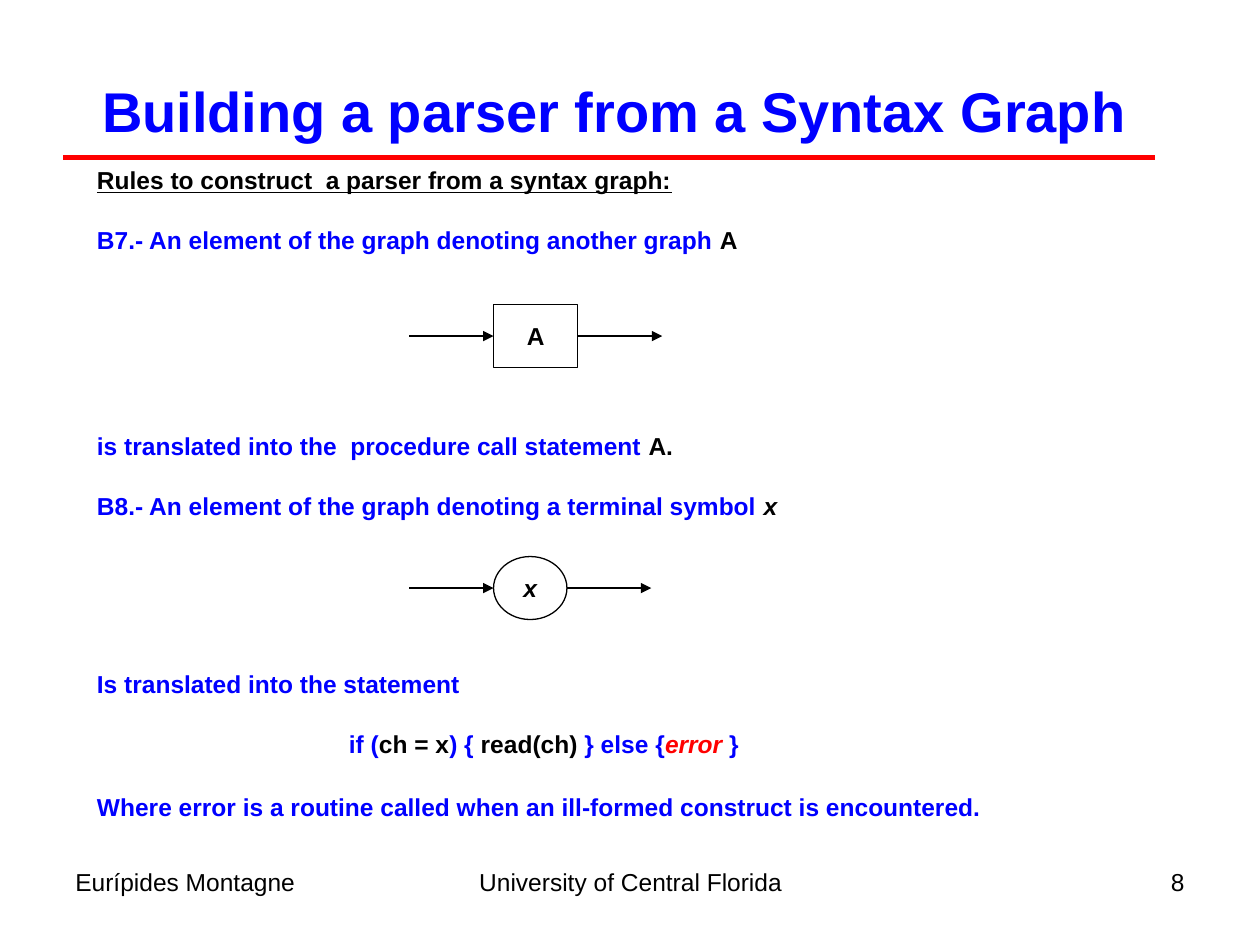
from lxml.etree import SubElement
from pptx import Presentation
from pptx.dml.color import RGBColor
from pptx.enum.shapes import MSO_CONNECTOR, MSO_SHAPE
from pptx.enum.text import MSO_ANCHOR, MSO_AUTO_SIZE, PP_ALIGN
from pptx.oxml.ns import qn
from pptx.util import Cm, Pt

BLUE, BLACK, RED = "0000FF", "000000", "FF0000"


def add_run(p, text, color=BLACK, size=14, bold=True, italic=False, underline=False):
    r = p.add_run()
    r.text = text
    f = r.font
    f.name, f.size = "Arial", Pt(size)
    f.bold, f.italic, f.underline = bold, italic, underline
    f.color.rgb = RGBColor.from_string(color)


def add_line(s, x1, y1, x2, y2, color=BLACK, width=0.75, arrow=False):
    line = s.shapes.add_connector(MSO_CONNECTOR.STRAIGHT, Cm(x1), Cm(y1), Cm(x2), Cm(y2))
    line.line.color.rgb = RGBColor.from_string(color)
    line.line.width = Pt(width)
    if arrow:
        SubElement(line.line._get_or_add_ln(), qn("a:tailEnd"), type="triangle")
    SubElement(line._element.spPr, qn("a:effectLst"))
    return line


prs = Presentation()
prs.slide_width, prs.slide_height = Cm(25.4), Cm(19.05)
s = prs.slides.add_slide(prs.slide_layouts[1])

# Title and rule below it
title = s.shapes.title
title.left, title.top, title.width, title.height = Cm(0.64), Cm(0.64), Cm(23.5), Cm(3.18)
tf = title.text_frame
tf.auto_size = MSO_AUTO_SIZE.NONE
tf.vertical_anchor = MSO_ANCHOR.MIDDLE
p = tf.paragraphs[0]
p.alignment = PP_ALIGN.CENTER
add_run(p, "Building a parser from a Syntax Graph", BLUE, 32)
add_line(s, 1.27, 3.18, 23.28, 3.18, RED, 3)

# Rules: space before (pt), left indent (cm), runs
rules = [
    (0, 0, [("Rules to construct  a parser from a syntax graph:", BLACK)]),
    (17.4, 0, [("B7.- An element of the graph denoting another graph ", BLUE), ("A", BLACK)]),
    (101, 0, [("is translated into the  procedure call statement ", BLUE), ("A.", BLACK)]),
    (17.4, 0, [("B8.- An element of the graph denoting a terminal symbol ", BLUE), ("x", BLACK)]),
    (85, 0, [("Is translated into the statement", BLUE)]),
    (17.4, 5.08, [("if (", BLUE), ("ch = x", BLACK), (") { ", BLUE), ("read(ch)", BLACK),
                  (" } else {", BLUE), ("error", RED), (" }", BLUE)]),
    (19.3, 0, [("Where error is a routine called when an ill-formed construct is encountered.", BLUE)]),
]
body = s.placeholders[1]
body.left, body.top, body.width, body.height = Cm(1.7), Cm(3.2), Cm(18.44), Cm(13.34)
tf = body.text_frame
tf.auto_size = MSO_AUTO_SIZE.NONE
tf.vertical_anchor = MSO_ANCHOR.TOP
tf.margin_right = 0
for i, (space, indent, runs) in enumerate(rules):
    p = tf.add_paragraph() if i else tf.paragraphs[0]
    p.space_before = Pt(space)
    pPr = p._p.get_or_add_pPr()
    pPr.set("marL", str(Cm(indent)))
    pPr.set("indent", "0")
    SubElement(pPr, qn("a:buNone"))
    for text, color in runs:
        add_run(p, text, color, italic=text in ("x", "error"), underline=i == 0)

# Graph elements, each with an arrow in and an arrow out
left, height, arrow_len = 9.95, 1.27, 1.7
for kind, label, top, width in [(MSO_SHAPE.RECTANGLE, "A", 6.14, 1.7),
                                (MSO_SHAPE.OVAL, "x", 11.22, 1.48)]:
    node = s.shapes.add_shape(kind, Cm(left), Cm(top), Cm(width), Cm(height))
    node.shadow.inherit = False
    node.fill.background()
    node.line.color.rgb = RGBColor.from_string(BLACK)
    node.line.width = Pt(0.75)
    tf = node.text_frame
    tf.margin_left = tf.margin_right = tf.margin_top = tf.margin_bottom = 0
    tf.vertical_anchor = MSO_ANCHOR.MIDDLE
    p = tf.paragraphs[0]
    p.alignment = PP_ALIGN.CENTER
    add_run(p, label, italic=label == "x")

    mid, right = top + height / 2, left + width
    arrow_in = add_line(s, left - arrow_len, mid, left, mid, arrow=True)
    arrow_out = add_line(s, right, mid, right + arrow_len, mid, arrow=True)
    if kind == MSO_SHAPE.RECTANGLE:
        arrow_in.end_connect(node, 1)
        arrow_out.begin_connect(node, 3)

# Footer
for x, width, align, text in [(1.27, 5.92, PP_ALIGN.LEFT, "Eurípides Montagne"),
                              (8.69, 8.05, PP_ALIGN.CENTER, "University of Central Florida"),
                              (18.21, 5.92, PP_ALIGN.RIGHT, "8")]:
    sp = s.shapes.add_textbox(Cm(x), Cm(17.35), Cm(width), Cm(1.32))
    tf = sp.text_frame
    tf.word_wrap = True
    p = tf.paragraphs[0]
    p.alignment = align
    add_run(p, text, bold=False)

prs.save("out.pptx")
